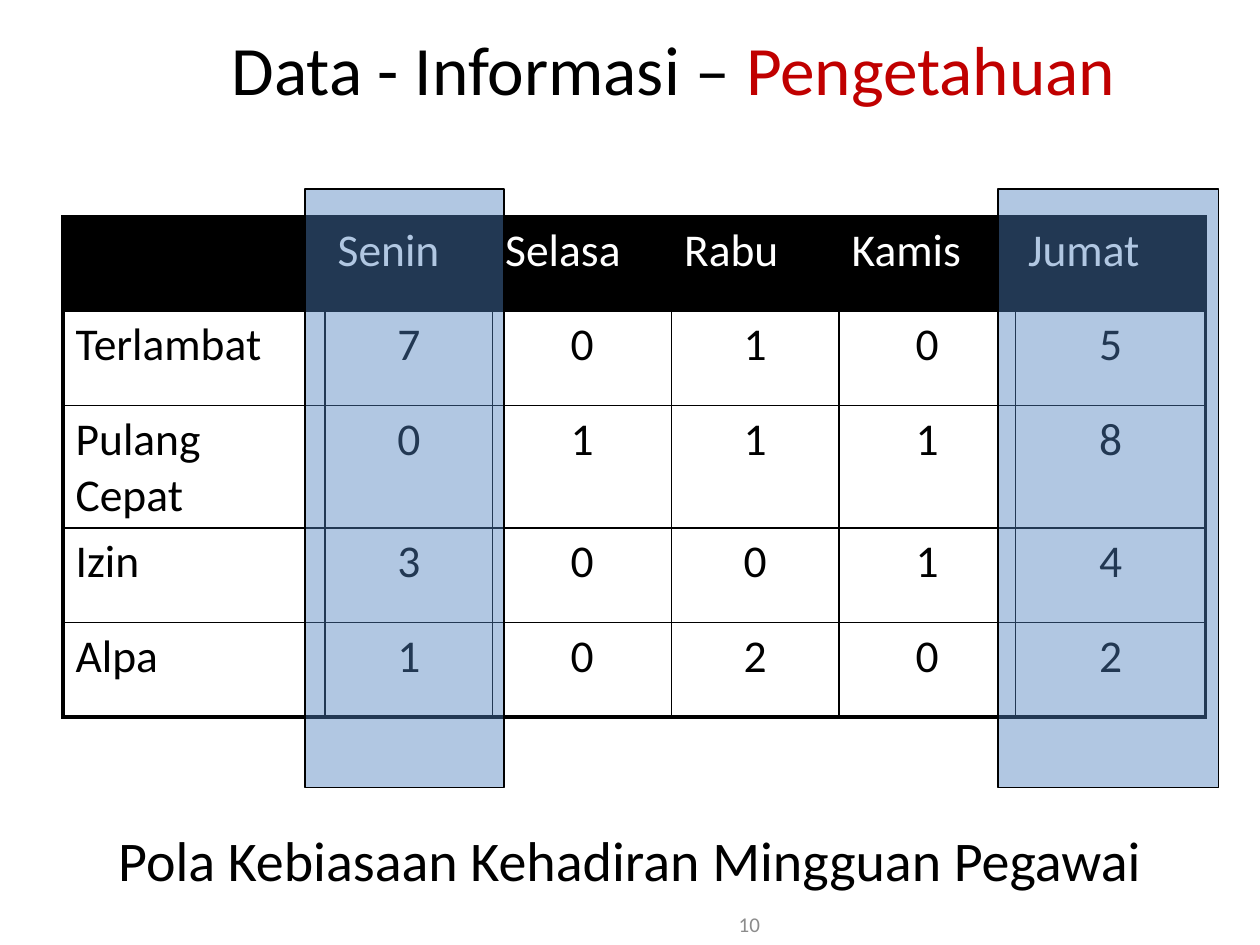
from lxml import etree
from pptx import Presentation
from pptx.dml.color import RGBColor
from pptx.enum.shapes import MSO_SHAPE
from pptx.enum.text import MSO_ANCHOR, PP_ALIGN
from pptx.oxml.ns import qn
from pptx.util import Inches, Pt

BLACK = RGBColor(0x00, 0x00, 0x00)
WHITE = RGBColor(0xFF, 0xFF, 0xFF)
RED = RGBColor(0xC0, 0x00, 0x00)
GREY = RGBColor(0x8C, 0x8C, 0x8C)
BLUE = RGBColor(0x4F, 0x81, 0xBD)
LEFT, CENTER, RIGHT = PP_ALIGN.LEFT, PP_ALIGN.CENTER, PP_ALIGN.RIGHT
TOP, MIDDLE = MSO_ANCHOR.TOP, MSO_ANCHOR.MIDDLE
RECTANGLE = MSO_SHAPE.RECTANGLE

FONT = "Calibri"
THIN, THICK = 1, 2.25
COLUMN_WIDTHS = [2.08, 1.33, 1.42, 1.33, 1.4, 1.51]
ROW_HEIGHTS = [0.75, 0.75, 0.97, 0.75, 0.75]
ATTENDANCE = [
    ["", "Senin", "Selasa", "Rabu", "Kamis", "Jumat"],
    ["Terlambat", "7", "0", "1", "0", "5"],
    ["Pulang Cepat", "0", "1", "1", "1", "8"],
    ["Izin", "3", "0", "0", "1", "4"],
    ["Alpa", "1", "0", "2", "0", "2"],
]


def add_span(para, text, size=26, color=BLACK):
    span = para.add_run()
    span.text = text
    span.font.name = FONT
    span.font.size = Pt(size)
    span.font.color.rgb = color


def add_text(page, box, spans, size, align=CENTER, anchor=TOP):
    """Place one paragraph; spans is a list of (text, color) pairs."""
    frame = page.shapes.add_textbox(*map(Inches, box)).text_frame
    frame.word_wrap = True
    frame.vertical_anchor = anchor
    para = frame.paragraphs[0]
    para.alignment = align
    for text, color in spans:
        add_span(para, text, size=size, color=color)


def set_borders(cell, widths):
    """Draw black borders; widths maps L, R, T and B to points."""
    properties = cell._tc.get_or_add_tcPr()
    for index, (side, width) in enumerate(widths.items()):
        line = etree.Element(qn(f"a:ln{side}"), w=str(Pt(width)))
        fill = etree.SubElement(line, qn("a:solidFill"))
        etree.SubElement(fill, qn("a:srgbClr"), val=str(BLACK))
        properties.insert(index, line)


def add_attendance_table(page, box):
    last_row, last_column = len(ROW_HEIGHTS) - 1, len(COLUMN_WIDTHS) - 1
    frame = page.shapes.add_table(last_row + 1, last_column + 1, *map(Inches, box))
    table = frame.table
    for column, width in zip(table.columns, COLUMN_WIDTHS):
        column.width = Inches(width)
    for r, (row, height) in enumerate(zip(table.rows, ROW_HEIGHTS)):
        row.height = Inches(height)
        for c, cell in enumerate(row.cells):
            header = r == 0
            cell.fill.solid()
            cell.fill.fore_color.rgb = BLACK if header else WHITE
            set_borders(cell, {
                "L": THICK if c == 0 else THIN,
                "R": THICK if c == last_column else THIN,
                "T": THICK if header else THIN,
                "B": THICK if r == last_row else THIN,
            })
            para = cell.text_frame.paragraphs[0]
            para.alignment = LEFT if header or c == 0 else CENTER
            if ATTENDANCE[r][c]:
                add_span(para, ATTENDANCE[r][c], color=WHITE if header else BLACK)


def add_highlight(page, box, opacity=44):
    """Lay a translucent band over a table column."""
    band = page.shapes.add_shape(RECTANGLE, *map(Inches, box))
    band.shadow.inherit = False
    band.fill.solid()
    band.fill.fore_color.rgb = BLUE
    color = band.fill._xPr.find(qn("a:solidFill")).find(qn("a:srgbClr"))
    etree.SubElement(color, qn("a:alpha"), val=str(opacity * 1000))
    band.line.color.rgb = BLACK
    band.line.width = Pt(0.75)


def main():
    deck = Presentation()
    deck.slide_width, deck.slide_height = Inches(10), Inches(7.5)
    page = deck.slides.add_slide(deck.slide_layouts[6])
    add_text(page, (0.69, 0.17, 9.31, 0.73),
             [("Data - Informasi – ", BLACK), ("Pengetahuan", RED)],
             size=39.6, anchor=MIDDLE)
    add_text(page, (0.69, 6.5, 8.62, 0.62),
             [("Pola Kebiasaan Kehadiran Mingguan Pegawai", BLACK)], size=32)
    add_text(page, (3.88, 7.17, 2.25, 0.33), [("10", GREY)],
             size=12, align=RIGHT, anchor=MIDDLE)
    add_attendance_table(page, (0.5, 1.72, sum(COLUMN_WIDTHS), sum(ROW_HEIGHTS)))
    for left, width in [(2.42, 1.58), (7.92, 1.75)]:
        add_highlight(page, (left, 1.5, width, 4.75))
    deck.save("out.pptx")


if __name__ == "__main__":
    main()
